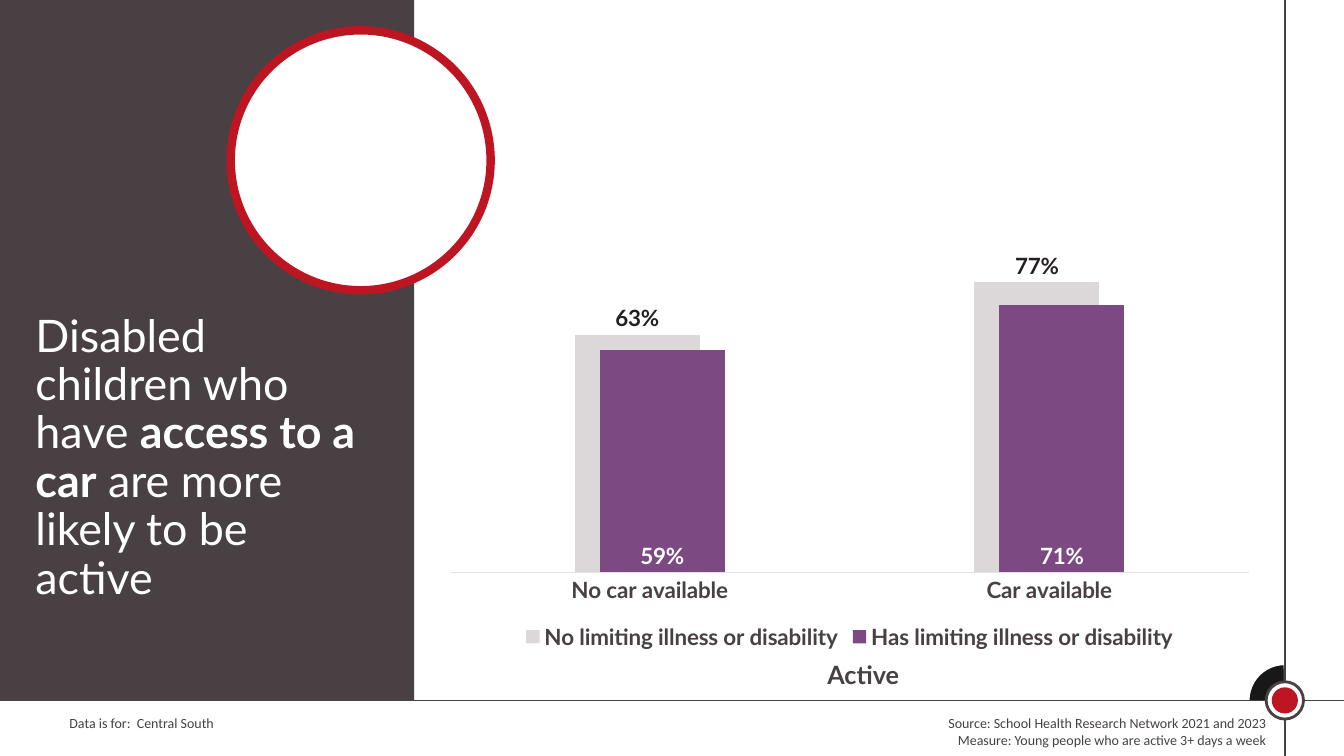
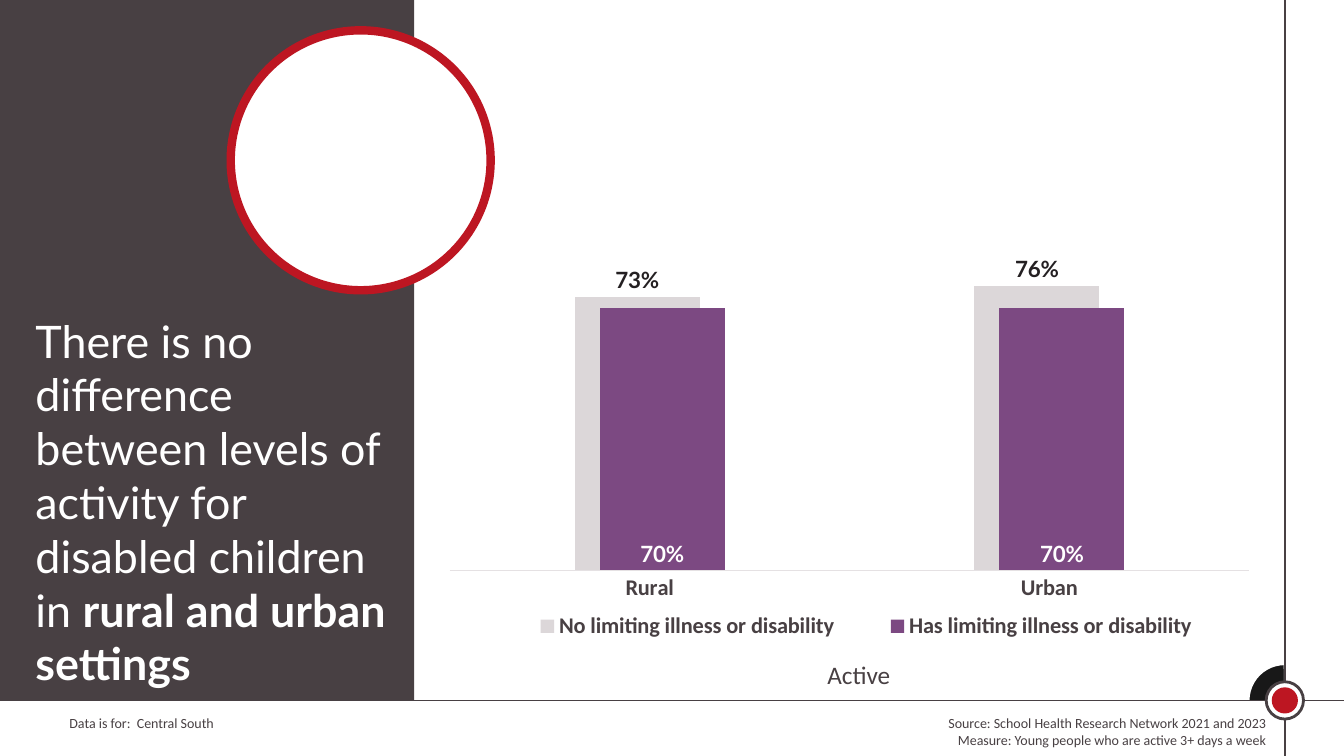
from lxml import etree
from pptx import Presentation
from pptx.chart.data import CategoryChartData
from pptx.dml.color import RGBColor
from pptx.enum import chart as ch, shapes, text
from pptx.oxml import ns
from pptx.util import Cm, Pt

COLORS = {
    "slate": "484043", "red": "BD1622", "black": "181818", "white": "FFFFFF",
    "grey": "DCD7D9", "purple": "7C4982", "ink": "242022", "axis": "E5E1E3",
}
WIDTH, HEIGHT = 33.87, 19.05
HUB = (32.38, 17.65)
PANEL_WIDTH = 10.44
SERIES = [
    ("No limiting illness or disability", "grey", "ink", ch.XL_LABEL_POSITION.OUTSIDE_END),
    ("Has limiting illness or disability", "purple", "white", ch.XL_LABEL_POSITION.INSIDE_BASE),
]
SOURCE = [
    "Source: School Health Research Network 2021 and 2023",
    "Measure: Young people who are active 3+ days a week",
]


def rgb(name):
    return RGBColor.from_string(COLORS[name])


def style_font(font, size, face, color, bold=False):
    font.size, font.name, font.bold = Pt(size), face, bold
    font.color.rgb = rgb(color)


def add_run(p, content, *style):
    r = p.add_run()
    r.text = content
    style_font(r.font, *style)


def add_text(slide, box, lines, style, align=text.PP_ALIGN.LEFT):
    tf = slide.shapes.add_textbox(*map(Cm, box)).text_frame
    tf.word_wrap = True
    for i, line in enumerate(lines):
        p = tf.add_paragraph() if i else tf.paragraphs[0]
        p.alignment = align
        add_run(p, line, *style)


def add_shape(slide, kind, box, fill, line=None, weight=0):
    sp = slide.shapes.add_shape(kind, *map(Cm, box))
    sp.shadow.inherit = False
    sp.fill.solid()
    sp.fill.fore_color.rgb = rgb(fill)
    if line:
        sp.line.color.rgb = rgb(line)
        sp.line.width = Pt(weight)
    else:
        sp.line.fill.background()
    return sp


def add_disc(slide, center, size, *style, kind=shapes.MSO_SHAPE.OVAL):
    x, y = center
    return add_shape(slide, kind, (x - size / 2, y - size / 2, size, size), *style)


def add_rule(slide, *ends):
    line = slide.shapes.add_connector(shapes.MSO_CONNECTOR.STRAIGHT, *map(Cm, ends))
    line.line.color.rgb = rgb("slate")
    line.line.width = Pt(1)
    etree.SubElement(line.element.spPr, ns.qn("a:effectLst"))


def build_layout(layout, slide):
    for ph in list(layout.placeholders):
        if ph.placeholder_format.type != shapes.PP_PLACEHOLDER.TITLE:
            ph.element.getparent().remove(ph.element)
    x, y = HUB
    small = (10, "Calibri", "slate")
    add_text(slide, (1.5, 17.88, 11.15, 0.69), ["Data is for:  Central South"], small)
    pie = add_disc(slide, HUB, 1.83, "black", "white", 1.5, kind=shapes.MSO_SHAPE.PIE)
    pie.adjustments[0], pie.adjustments[1] = 106.62, 162
    add_rule(slide, x, 0, x, HEIGHT)
    add_rule(slide, 0, y, WIDTH, y)
    add_disc(slide, HUB, 0.94, "white", "slate", 2)
    add_disc(slide, HUB, 0.66, "red")
    add_shape(slide, shapes.MSO_SHAPE.RECTANGLE, (0, 0, PANEL_WIDTH, y), "slate")
    add_disc(slide, (9.09, 4.04), 6.55, "white", "red", 6)
    add_text(slide, (15.72, 17.88, 16.43, 1.12), SOURCE, small, text.PP_ALIGN.RIGHT)
    for sp in list(slide.shapes):
        if not sp.is_placeholder:
            layout.shapes.element.append(sp.element) if hasattr(layout.shapes, "element") \
                else layout.element.cSld.spTree.append(sp.element)


def set_title(slide, size, runs, spacing):
    title = slide.shapes.title
    title.left, title.top = Cm(0.64), Cm(7.77)
    title.width, title.height = map(Cm, size)
    tf = title.text_frame
    tf.word_wrap = True
    tf.auto_size = text.MSO_AUTO_SIZE.NONE
    tf.vertical_anchor = text.MSO_ANCHOR.TOP
    p = tf.paragraphs[0]
    p.alignment, p.line_spacing = text.PP_ALIGN.LEFT, spacing
    for content, bold in runs:
        add_run(p, content, 32, "Lato", "white", bold)


def place_legend(legend, **place):
    layout = etree.Element(ns.qn("c:layout"))
    manual = etree.SubElement(layout, ns.qn("c:manualLayout"))
    for tag in ("xMode", "yMode"):
        etree.SubElement(manual, ns.qn("c:" + tag), val="edge")
    for tag, value in place.items():
        etree.SubElement(manual, ns.qn("c:" + tag), val=str(value))
    root = legend._element
    for old in root.findall(ns.qn("c:layout")):
        root.remove(old)
    root.find(ns.qn("c:legendPos")).addnext(layout)


def add_activity_chart(slide, categories, values, face, legend_place):
    data = CategoryChartData(number_format="0%")
    data.categories = categories
    for (name, *_), vals in zip(SERIES, values):
        data.add_series(name, vals)
    box = map(Cm, (10.92, 4.7, 20.98, 11.79))
    chart = slide.shapes.add_chart(ch.XL_CHART_TYPE.COLUMN_CLUSTERED, *box, data).chart
    chart.has_title = False
    style_font(chart.font, 16, "Calibri", "slate")
    chart.has_legend = True
    chart.legend.position = ch.XL_LEGEND_POSITION.BOTTOM
    chart.legend.include_in_layout = False
    style_font(chart.legend.font, 16, face, "slate", True)
    if legend_place:
        place_legend(chart.legend, **legend_place)
    axis = chart.category_axis
    axis.major_tick_mark = ch.XL_TICK_MARK.NONE
    axis.format.line.color.rgb = rgb("axis")
    axis.format.line.width = Pt(0.75)
    style_font(axis.tick_labels.font, 16, face, "slate", True)
    scale = chart.value_axis
    scale.visible = scale.has_major_gridlines = False
    scale.minimum_scale, scale.maximum_scale = 0, 1
    plot = chart.plots[0]
    plot.gap_width, plot.overlap, plot.vary_by_categories = 200, 80, False
    for series, (_, fill, ink, position) in zip(plot.series, SERIES):
        series.format.fill.solid()
        series.format.fill.fore_color.rgb = rgb(fill)
        labels = series.data_labels
        labels.show_value = True
        labels.position = position
        labels.number_format, labels.number_format_is_linked = "0%", False
        style_font(labels.font, 16, "Lato", ink, True)


def add_finding(slide, title, chart, caption):
    set_title(slide, *title)
    add_activity_chart(slide, *chart)
    add_text(slide, (20.6, 16.48, 3.1, 1.02), ["Active"], caption)


def main():
    prs = Presentation()
    prs.slide_width, prs.slide_height = Cm(WIDTH), Cm(HEIGHT)
    layout = prs.slide_layouts[5]
    car, setting = [prs.slides.add_slide(layout) for _ in range(2)]
    build_layout(layout, car)
    add_finding(
        car,
        ((8.71, 8.86), [("Disabled children who have ", False), ("access to a car", True),
                        (" are more likely to be active", False)], 0.9),
        (["No car available", "Car available"], [(0.63, 0.77), (0.59, 0.71)], "Lato", None),
        (18, "Lato", "slate", True),
    )
    add_finding(
        setting,
        ((9.4, 9.83), [("There is no difference between levels of activity for disabled "
                        "children in ", False), ("rural and urban settings", True)], 1.0),
        (["Rural", "Urban"], [(0.73, 0.76), (0.7, 0.7)], "Calibri",
         {"x": 0.07, "y": 0.9, "w": 0.9, "h": 0.08}),
        (18, "Calibri", "slate"),
    )
    prs.save("out.pptx")


if __name__ == "__main__":
    main()
